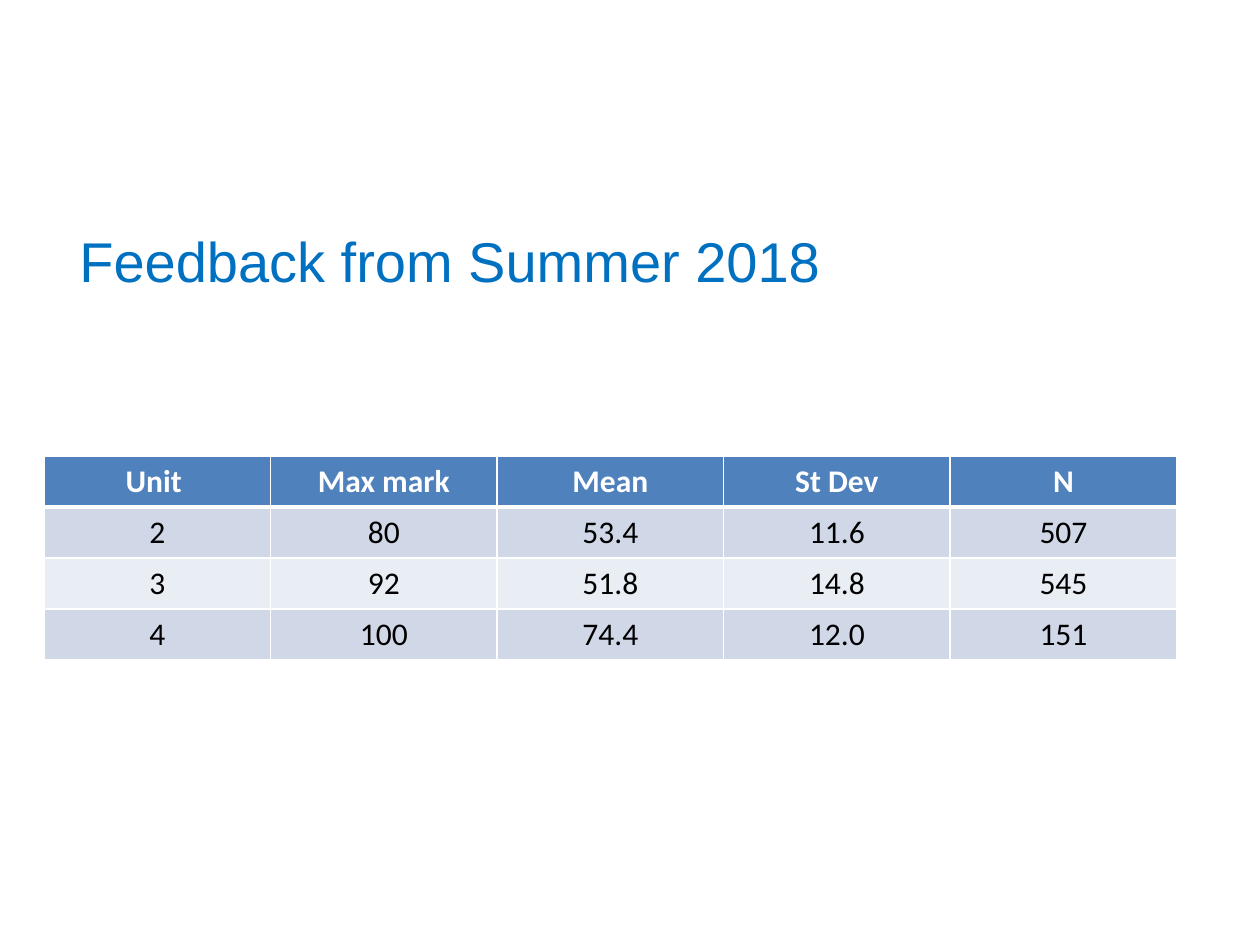
"""Build the summer 2018 feedback slide with its table of unit results."""
import pptx
import pptx.dml.color
import pptx.enum.text
import pptx.oxml
import pptx.oxml.ns
import pptx.util

TITLE = "Feedback from Summer 2018"
RESULTS = [
    ("Unit ", "Max mark", "Mean", "St Dev", "N"),
    ("2", "80", "53.4", "11.6", "507"),
    ("3", "92", "51.8", "14.8", "545"),
    ("4", "100", "74.4", "12.0", "151"),
]

SLIDE_SIZE = (1260, 945)
TITLE_BOX = (67, 215, 1160, 164)
TITLE_TOP_MARGIN = 12
TABLE_BOX = (44, 456, 1133, 204)

WHITE = pptx.dml.color.RGBColor(0xFF, 0xFF, 0xFF)
BLACK = pptx.dml.color.RGBColor(0x00, 0x00, 0x00)
TITLE_BLUE = pptx.dml.color.RGBColor(0x00, 0x70, 0xC0)
HEADER_BLUE = pptx.dml.color.RGBColor(0x4F, 0x81, 0xBD)
BANDS = (
    pptx.dml.color.RGBColor(0xE9, 0xED, 0xF4),
    pptx.dml.color.RGBColor(0xD0, 0xD8, 0xE8),
)


def px(length):
    return round(length * pptx.util.Inches(1) / 126)


def add_run(paragraph, text, font_name, size, color, bold=False):
    run = paragraph.add_run()
    run.text = text
    run.font.name = font_name
    run.font.size = pptx.util.Pt(size)
    run.font.bold = bold
    run.font.color.rgb = color


def set_borders(cell, color, widths):
    properties = cell._tc.get_or_add_tcPr()
    for index, (side, width) in enumerate(widths.items()):
        border = pptx.oxml.parse_xml(
            f'<a:{side} {pptx.oxml.ns.nsdecls("a")} w="{pptx.util.Pt(width)}">'
            f'<a:solidFill><a:srgbClr val="{color}"/></a:solidFill></a:{side}>'
        )
        properties.insert(index, border)


def add_title(slide):
    shape = slide.shapes.add_textbox(*map(px, TITLE_BOX))
    frame = shape.text_frame
    frame.word_wrap = True
    frame.margin_top = px(TITLE_TOP_MARGIN)
    add_run(frame.paragraphs[0], TITLE, "Arial", 32, TITLE_BLUE)


def add_results(slide):
    row_count, column_count = len(RESULTS), len(RESULTS[0])
    shape = slide.shapes.add_table(row_count, column_count, *map(px, TABLE_BOX))
    table = shape.table
    for column in table.columns:
        column.width = px(TABLE_BOX[2] / column_count)
    for row in table.rows:
        row.height = px(TABLE_BOX[3] / row_count)
    for row_index, values in enumerate(RESULTS):
        header = row_index == 0
        top = 3 if row_index == 1 else 1
        bottom = 3 if header else 1
        for column_index, value in enumerate(values):
            cell = table.cell(row_index, column_index)
            cell.fill.solid()
            cell.fill.fore_color.rgb = HEADER_BLUE if header else BANDS[row_index % 2]
            set_borders(cell, WHITE, {"lnL": 1, "lnR": 1, "lnT": top, "lnB": bottom})
            paragraph = cell.text_frame.paragraphs[0]
            paragraph.alignment = pptx.enum.text.PP_ALIGN.CENTER
            add_run(paragraph, value, "Calibri", 18, WHITE if header else BLACK, header)


def main():
    presentation = pptx.Presentation()
    presentation.slide_width, presentation.slide_height = map(px, SLIDE_SIZE)
    slide = presentation.slides.add_slide(presentation.slide_layouts[6])
    add_title(slide)
    add_results(slide)
    presentation.save("out.pptx")


if __name__ == "__main__":
    main()
